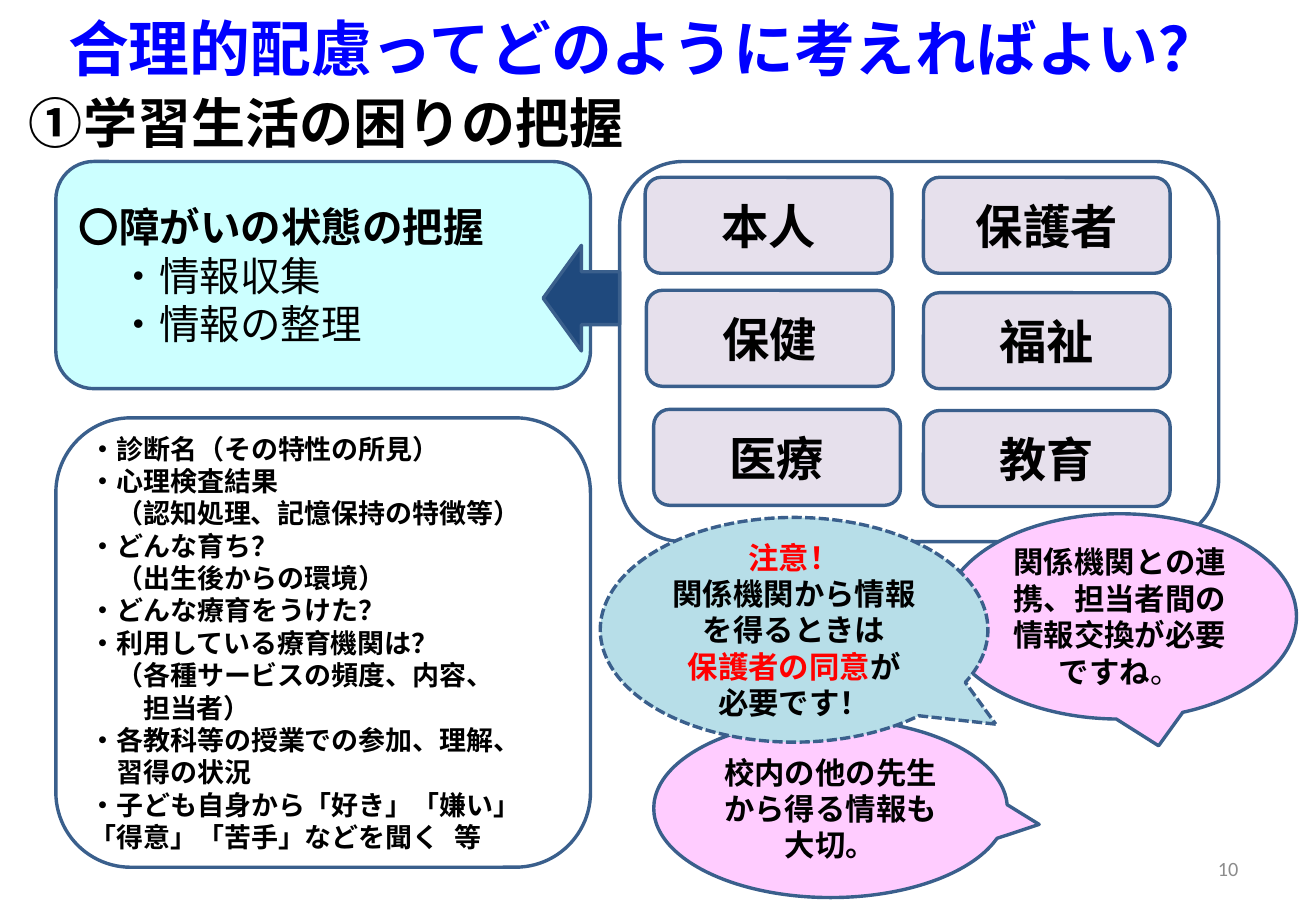
from dataclasses import dataclass

from pptx import Presentation
from pptx.dml.color import RGBColor
from pptx.enum.dml import MSO_LINE_DASH_STYLE as Dash
from pptx.enum.shapes import MSO_SHAPE as Shape
from pptx.enum.text import MSO_ANCHOR as Anchor, PP_ALIGN as Align
from pptx.oxml.ns import qn
from pptx.util import Emu, Pt
from lxml.etree import SubElement

PX = 9144
LINE_HEIGHT = 1.2
CJK = "Noto Sans CJK JP"
LATIN = "Calibri"
COLORS = {
    "title": "0000FF", "text": "000000", "alert": "FF0000", "number": "8C8C8C",
    "border": "3A5F8C", "white": "FFFFFF", "cyan": "CCFFFF", "card": "E6E0EC",
    "arrow": "1F497D", "pink": "FFCCFF", "aqua": "B7DEE8",
}


@dataclass(frozen=True)
class Span:
    text: str
    color: str = "text"
    bold: bool = True


@dataclass(frozen=True)
class Line:
    spans: tuple[Span, ...]
    indent: int = 0
    tab: int = 0


@dataclass(frozen=True)
class Card:
    text: str
    left: int
    top: int


@dataclass(frozen=True)
class Callout:
    box: tuple[int, int, int, int]
    tail: tuple[float, float]
    fill: str
    lines: tuple[Line, ...]
    dashed: bool = False


def line(text: str, indent: int = 0, tab: int = 0, color: str = "text", bold: bool = True) -> Line:
    return Line((Span(text, color, bold),), indent, tab)


def px(*lengths: int) -> list[Emu]:
    return [Emu(length * PX) for length in lengths]


def rgb(name: str) -> RGBColor:
    return RGBColor.from_string(COLORS[name])


def write_text(shape, lines, size: int, font: str = CJK, align=Align.LEFT, anchor=Anchor.MIDDLE) -> None:
    frame = shape.text_frame
    frame.word_wrap = True
    frame.vertical_anchor = anchor
    for index, item in enumerate(lines):
        para = frame.paragraphs[0] if index == 0 else frame.add_paragraph()
        para.alignment = align
        para.line_spacing = Pt(size * LINE_HEIGHT)
        para.space_before = para.space_after = Pt(0)
        props = para._p.get_or_add_pPr()
        props.set("marL", str(item.indent * PX))
        props.set("indent", "0")
        if item.tab:
            stops = SubElement(props, qn("a:tabLst"))
            SubElement(stops, qn("a:tab"), pos=str(item.tab * PX), algn="l")
        for span in item.spans:
            run = para.add_run()
            run.text = span.text
            run.font.size = Pt(size)
            run.font.bold = span.bold
            run.font.name = font
            run.font.color.rgb = rgb(span.color)
            SubElement(run._r.get_or_add_rPr(), qn("a:ea"), typeface=CJK)


def add_box(shapes, kind: Shape, box: tuple[int, int, int, int], fill: str):
    shape = shapes.add_shape(kind, *px(*box))
    shape.shadow.inherit = False
    shape.fill.solid()
    shape.fill.fore_color.rgb = rgb(fill)
    shape.line.color.rgb = rgb("border")
    shape.line.width = Pt(2)
    return shape


def add_callout(shapes, callout: Callout) -> None:
    shape = add_box(shapes, Shape.OVAL_CALLOUT, callout.box, callout.fill)
    shape.adjustments[0], shape.adjustments[1] = callout.tail
    if callout.dashed:
        shape.line.dash_style = Dash.SQUARE_DOT
    write_text(shape, callout.lines, 18, LATIN, Align.CENTER)


STATUS = (
    line("〇障がいの状態の把握"),
    line("・情報収集", indent=33, bold=False),
    line("・情報の整理", indent=33, bold=False),
)
CHECKLIST = (
    line("・診断名（その特性の所見）"),
    line("・心理検査結果"),
    line("（認知処理、記憶保持の特徴等）", indent=22),
    line("・どんな育ち？"),
    line("（出生後からの環境）", indent=22),
    line("・どんな療育をうけた？"),
    line("・利用している療育機関は？"),
    line("（各種サービスの頻度、内容、", indent=22),
    line("担当者）", indent=44),
    line("・各教科等の授業での参加、理解、"),
    line("習得の状況", indent=22),
    line("・子ども自身から「好き」「嫌い」「得意」「苦手」などを聞く\t等", tab=332),
)
CARDS = (
    Card("本人", 531, 146), Card("保護者", 760, 146),
    Card("保健", 532, 239), Card("福祉", 760, 241),
    Card("医療", 538, 337), Card("教育", 760, 338),
)
COOPERATION = Callout(
    (776, 423, 291, 169), (0.11, 0.63), "pink",
    (Line((Span("関係機関との連携、担当者間の情報交換が必要ですね"), Span("。", bold=False))),),
)
COLLEAGUES = Callout(
    (538, 592, 291, 147), (0.59, 0.09), "pink", (line("校内の他の先生から得る情報も大切。"),),
)
CONSENT = Callout(
    (494, 426, 319, 185), (0.52, 0.42), "aqua",
    (
        line("注意！", color="alert"),
        line("関係機関から情報を得るときは"),
        Line((Span("保護者の同意", "alert"), Span("が"))),
        line("必要です！"),
    ),
    dashed=True,
)


def main() -> None:
    deck = Presentation()
    deck.slide_width, deck.slide_height = px(1083, 750)
    page = deck.slides.add_slide(deck.slide_layouts[5])
    shapes = page.shapes

    title = shapes.title
    title.left, title.top, title.width, title.height = px(46, 4, 975, 70)
    write_text(title, (line("合理的配慮ってどのように考えればよい？", color="title"),), 36, anchor=Anchor.TOP)

    number = shapes.add_textbox(*px(776, 695, 253, 40))
    write_text(number, (line("10", color="number", bold=False),), 12, LATIN, Align.RIGHT)

    status = add_box(shapes, Shape.ROUNDED_RECTANGLE, (46, 133, 440, 187), "cyan")
    write_text(status, STATUS, 24)

    sources = shapes.add_group_shape().shapes
    add_box(sources, Shape.ROUNDED_RECTANGLE, (510, 133, 493, 313), "white")
    for card in CARDS:
        shape = add_box(sources, Shape.ROUNDED_RECTANGLE, (card.left, card.top, 203, 79), "card")
        write_text(shape, (line(card.text),), 28, LATIN, Align.CENTER)

    add_box(shapes, Shape.LEFT_ARROW, (447, 202, 63, 87), "arrow")
    add_callout(shapes, COOPERATION)
    checklist = add_box(shapes, Shape.ROUNDED_RECTANGLE, (46, 344, 440, 370), "white")
    write_text(checklist, CHECKLIST, 16)
    add_callout(shapes, COLLEAGUES)
    add_callout(shapes, CONSENT)

    heading = shapes.add_textbox(*px(14, 69, 569, 64))
    write_text(heading, (line("①学習生活の困りの把握"),), 32, anchor=Anchor.TOP)

    deck.save("out.pptx")


if __name__ == "__main__":
    main()
